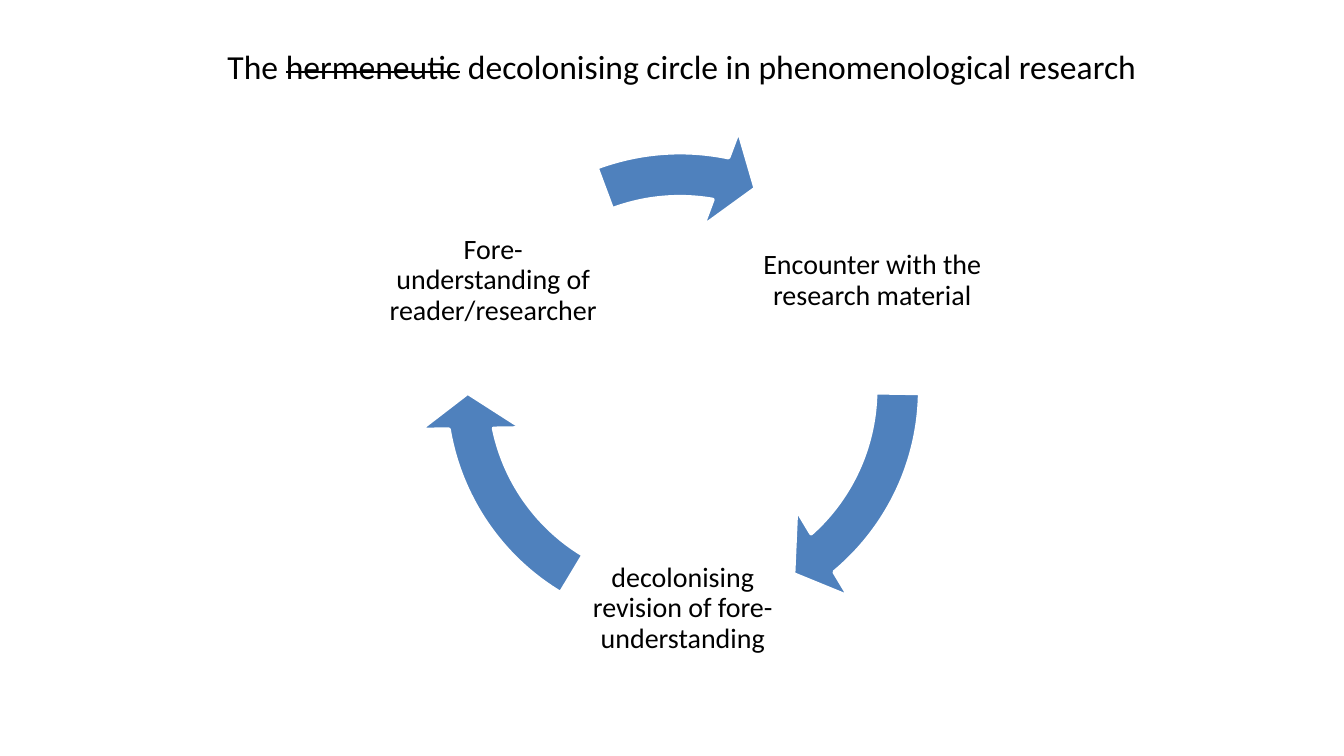
from dataclasses import dataclass

import pptx
import pptx.dml.color
import pptx.enum.shapes
import pptx.enum.text
import pptx.util

Inches = pptx.util.Inches


@dataclass(frozen=True)
class Theme:
    font: str = "Calibri"
    title_size: float = 18
    label_size: float = 15
    text: str = "000000"
    arrow: str = "4F81BD"
    outline: str = "FFFFFF"


@dataclass(frozen=True)
class Stage:
    text: str
    left: float
    top: float
    arrow_left: float
    arrow_end: float
    arrow_start: float


THEME = Theme()
SLIDE_WIDTH = 10
LABEL_SIZE = 1.68
LABEL_INSET = 0.02
RING_TOP = 0.92
RING_SIZE = 3.96
BAND_WIDTH, HEAD_ANGLE, HEAD_WIDTH = 0.083, 5.764, 0.096

STAGES = [
    Stage("Encounter with the research material", 5.65, 1.25, 3.1, 29.62, 0.53),
    Stage("decolonising revision of fore-understanding", 4.24, 3.69, 3.1, 101.71, 72.61),
    Stage("Fore-understanding of reader/researcher", 2.83, 1.25, 3.08, 168.55, 149.68),
]
TITLE_PARTS = [
    ("The ", False),
    ("hermeneutic", True),
    (" decolonising circle in phenomenological research", False),
]


def color(value: str) -> pptx.dml.color.RGBColor:
    return pptx.dml.color.RGBColor.from_string(value)


def add_text(paragraph, text: str, *, size: float, struck: bool = False) -> None:
    paragraph.alignment = pptx.enum.text.PP_ALIGN.CENTER
    run = paragraph.add_run()
    run.text = text
    run.font.name = THEME.font
    run.font.size = pptx.util.Pt(size)
    run.font.color.rgb = color(THEME.text)
    if struck:
        run._r.get_or_add_rPr().set("strike", "sngStrike")


def add_title(slide) -> None:
    title = slide.shapes.title
    title.left, title.top = Inches(0.43), Inches(0.29)
    title.width, title.height = Inches(9.29), Inches(0.4)
    frame = title.text_frame
    frame.word_wrap = True
    frame.auto_size = pptx.enum.text.MSO_AUTO_SIZE.SHAPE_TO_FIT_TEXT
    frame.vertical_anchor = pptx.enum.text.MSO_ANCHOR.TOP
    for text, struck in TITLE_PARTS:
        add_text(frame.paragraphs[0], text, size=THEME.title_size, struck=struck)


def add_label(slide, stage: Stage) -> None:
    label = slide.shapes.add_textbox(
        Inches(stage.left), Inches(stage.top), Inches(LABEL_SIZE), Inches(LABEL_SIZE)
    )
    frame = label.text_frame
    frame.word_wrap = True
    frame.vertical_anchor = pptx.enum.text.MSO_ANCHOR.MIDDLE
    frame.margin_left = frame.margin_right = Inches(LABEL_INSET)
    frame.margin_top = frame.margin_bottom = Inches(LABEL_INSET)
    paragraph = frame.paragraphs[0]
    paragraph.line_spacing = 0.9
    add_text(paragraph, stage.text, size=THEME.label_size)


def add_arrow(slide, stage: Stage) -> None:
    arrow = slide.shapes.add_shape(
        pptx.enum.shapes.MSO_SHAPE.CIRCULAR_ARROW,
        Inches(stage.arrow_left), Inches(RING_TOP), Inches(RING_SIZE), Inches(RING_SIZE),
    )
    adjustments = (BAND_WIDTH, HEAD_ANGLE, stage.arrow_end, stage.arrow_start, HEAD_WIDTH)
    for index, value in enumerate(adjustments):
        arrow.adjustments[index] = value
    arrow.shadow.inherit = False
    arrow.fill.solid()
    arrow.fill.fore_color.rgb = color(THEME.arrow)
    arrow.line.color.rgb = color(THEME.outline)
    arrow.line.width = pptx.util.Pt(2)


def main() -> None:
    presentation = pptx.Presentation()
    presentation.slide_width = Inches(SLIDE_WIDTH)
    presentation.slide_height = Inches(SLIDE_WIDTH * 9 / 16)
    slide = presentation.slides.add_slide(presentation.slide_layouts.get_by_name("Title Only"))
    add_title(slide)
    for stage in STAGES:
        add_label(slide, stage)
        add_arrow(slide, stage)
    presentation.save("out.pptx")


if __name__ == "__main__":
    main()
